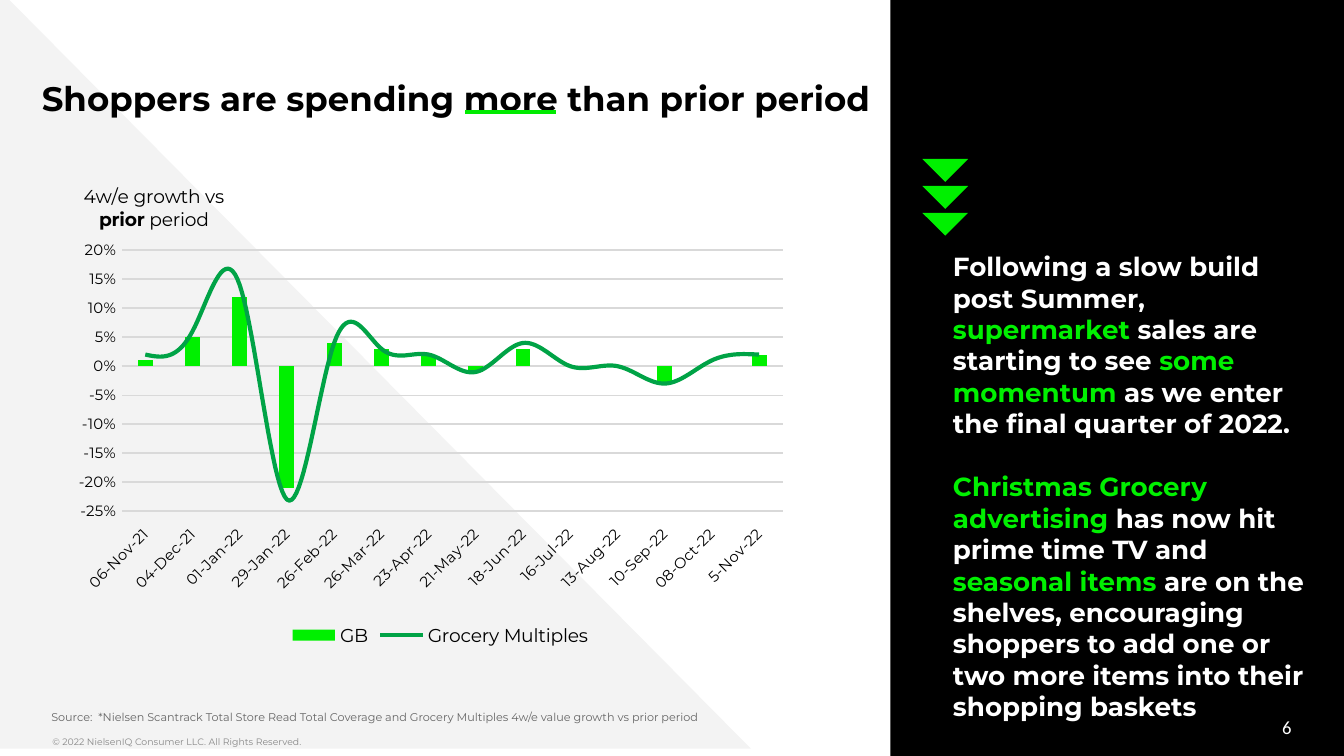
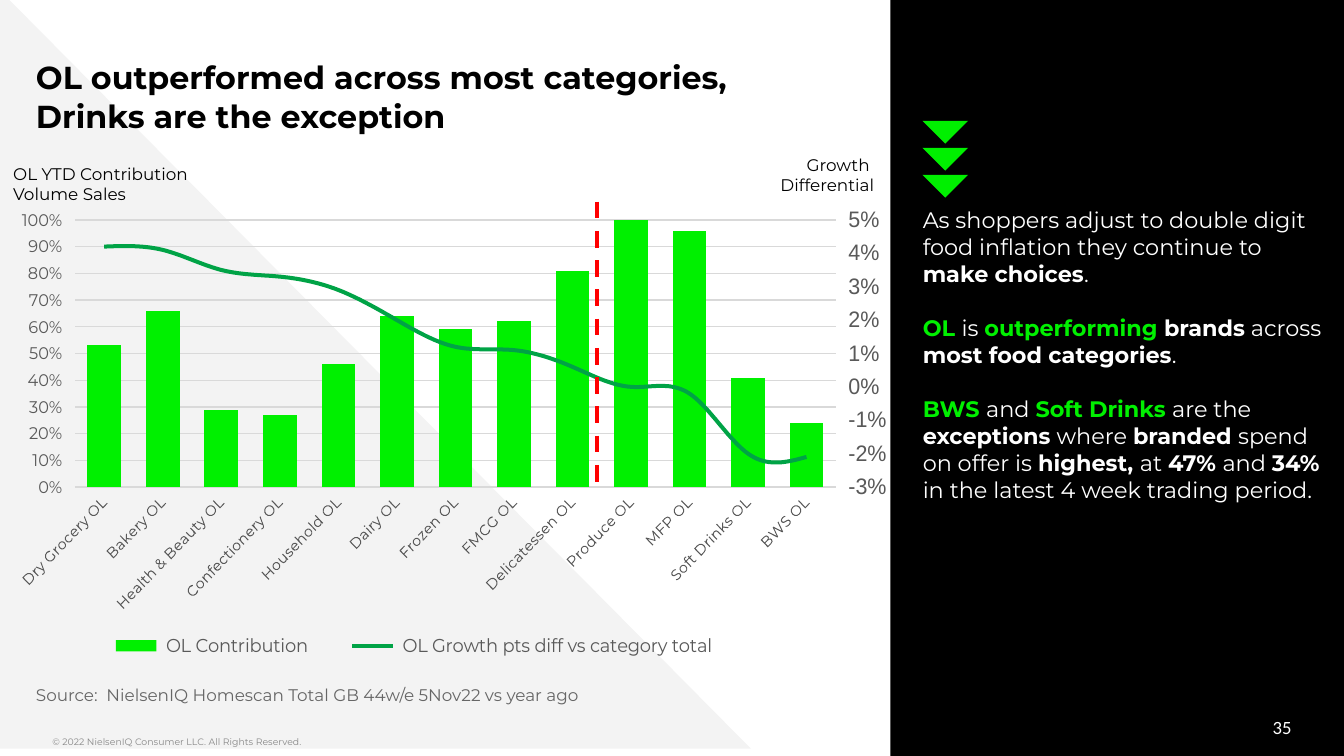
from copy import deepcopy
from dataclasses import dataclass

from lxml.etree import SubElement
from pptx import Presentation
from pptx.chart.axis import ValueAxis
from pptx.chart.data import CategoryChartData
from pptx.dml.color import RGBColor
from pptx.enum.chart import (XL_CHART_TYPE, XL_LEGEND_POSITION, XL_MARKER_STYLE,
                             XL_TICK_LABEL_POSITION, XL_TICK_MARK)
from pptx.enum.dml import MSO_LINE
from pptx.enum.shapes import MSO_CONNECTOR, MSO_SHAPE
from pptx.enum.text import MSO_ANCHOR, MSO_AUTO_SIZE, PP_ALIGN
from pptx.oxml import parse_xml
from pptx.oxml.ns import nsdecls, qn
from pptx.util import Cm, Pt


@dataclass(frozen=True)
class Theme:
    font: str = "Montserrat"
    number_font: str = "Calibri"
    axis_font: str = "Arial"
    black: str = "000000"
    white: str = "FFFFFF"
    backdrop: str = "F3F3F3"
    accent: str = "00F000"
    underline: str = "00EB00"
    trend: str = "00A346"
    divider: str = "FF0000"
    grid: str = "D9D9D9"
    label: str = "595959"
    source: str = "666666"
    copyright: str = "888888"
    copyright_size: float = 5
    tick_size: float = 8
    label_size: float = 9
    legend_size: float = 10
    right_axis_size: float = 12
    line_height: float = 1.22


def rgb(value):
    return RGBColor.from_string(value)


def box(left, top, width, height):
    return Cm(left), Cm(top), Cm(width), Cm(height)


def set_layout(parent, index, inner=False, **fractions):
    """Fix the place of a chart part, as fractions of the chart."""
    for old in parent.findall(qn("c:layout")):
        parent.remove(old)
    target = '<c:layoutTarget val="inner"/>' if inner else ""
    modes = "".join(f'<c:{key}Mode val="edge"/>' for key in "xy")
    sizes = "".join(f'<c:{key} val="{value}"/>' for key, value in fractions.items())
    parent.insert(index, parse_xml(
        f'<c:layout {nsdecls("c")}><c:manualLayout>{target}{modes}{sizes}'
        f'</c:manualLayout></c:layout>'))


def move_last_series_to_line(chart):
    """Turn the second series into a line; return the left and right value axes."""
    plot_area = chart.element.find(".//" + qn("c:plotArea"))
    series = plot_area.findall(".//" + qn("c:ser"))[-1]
    invert = series.find(qn("c:invertIfNegative"))
    if invert is not None:
        series.remove(invert)
    line_chart = parse_xml(
        f'<c:lineChart {nsdecls("c")}><c:grouping val="standard"/><c:varyColors val="0"/>'
        '<c:marker val="1"/><c:axId val="101"/><c:axId val="102"/></c:lineChart>')
    line_chart.insert(2, series)
    plot_area.find(qn("c:barChart")).addnext(line_chart)

    category = plot_area.find(qn("c:catAx"))
    left = plot_area.find(qn("c:valAx"))
    right, hidden = deepcopy(left), deepcopy(category)
    for axis, own, other in ((right, "102", "101"), (hidden, "101", "102")):
        axis.find(qn("c:axId")).set("val", own)
        axis.find(qn("c:crossAx")).set("val", other)
    right.remove(right.find(qn("c:majorGridlines")))
    right.find(qn("c:axPos")).set("val", "r")
    right.find(qn("c:crosses")).set("val", "max")
    hidden.find(qn("c:delete")).set("val", "1")
    left.addnext(right)
    right.addnext(hidden)
    return ValueAxis(left), ValueAxis(right)


class Deck:
    def __init__(self, theme):
        self.theme = theme
        self.presentation = Presentation()
        self.presentation.slide_width = Cm(25.4)
        self.presentation.slide_height = Cm(14.29)
        self.slide = None

    def start_slide(self, title, place, size, number):
        theme = self.theme
        self.slide = self.presentation.slides.add_slide(self.presentation.slide_layouts[5])
        self.shape(self.slide.shapes, MSO_SHAPE.RECTANGLE, (16.83, -0.05, 8.71, 14.38), theme.black)
        self.shape(self.slide.shapes, MSO_SHAPE.RIGHT_TRIANGLE, (0, -0.18, 14.19, 14.33),
                   theme.backdrop)
        self.text((0.99, 13.79, 14.07, 0.51), "© 2022 NielsenIQ Consumer LLC. All Rights Reserved.",
                  theme.copyright_size, theme.copyright)
        self.text((18.69, 13.36, 5.72, 0.76), str(number), 10, theme.white, font=theme.number_font,
                  align=PP_ALIGN.RIGHT, anchor=MSO_ANCHOR.MIDDLE)
        heading = self.slide.shapes.title
        heading.element.getparent().append(heading.element)
        heading.left, heading.top, heading.width, heading.height = box(*place)
        frame = heading.text_frame
        frame.text = title
        self.frame(frame, 0, 0.25, MSO_ANCHOR.TOP)
        frame.paragraphs[0].alignment = PP_ALIGN.LEFT
        self.font(frame.paragraphs[0].runs[0].font, size, theme.black, bold=True)

    def font(self, font, size, color, bold=False, name=None):
        font.name = name or self.theme.font
        font.size = Pt(size)
        font.bold = bold
        font.color.rgb = rgb(color)

    def frame(self, frame, side, edge, anchor, wrap=True):
        frame.margin_left = frame.margin_right = Cm(side)
        frame.margin_top = frame.margin_bottom = Cm(edge)
        frame.vertical_anchor = anchor
        frame.word_wrap = wrap
        frame.auto_size = MSO_AUTO_SIZE.NONE

    def shape(self, shapes, kind, place, color):
        shape = shapes.add_shape(kind, *box(*place))
        shape.shadow.inherit = False
        shape.fill.solid()
        shape.fill.fore_color.rgb = rgb(color)
        shape.line.fill.background()
        return shape

    def text(self, place, text, size, color, font=None, align=PP_ALIGN.LEFT,
             anchor=MSO_ANCHOR.TOP, side=0, edge=0.13, wrap=True):
        frame = self.slide.shapes.add_textbox(*box(*place)).text_frame
        frame.text = text
        self.frame(frame, side, edge, anchor, wrap)
        for paragraph in frame.paragraphs:
            paragraph.alignment = align
            self.font(paragraph.runs[0].font, size, color, name=font)

    def source(self, place, text, size):
        self.text(place, text, size, self.theme.source, anchor=MSO_ANCHOR.BOTTOM, edge=0.25)

    def axis_label(self, place, text, align):
        self.text(place, text, self.theme.label_size, self.theme.black, align=align,
                  side=0.25, wrap=False)

    def commentary(self, place, paragraphs, size):
        """Each run is (text, mark): "" plain, "b" bold, "g" bold green."""
        frame = self.slide.shapes.add_textbox(*box(*place)).text_frame
        self.frame(frame, 0, 0.13, MSO_ANCHOR.TOP)
        for index, runs in enumerate(paragraphs):
            paragraph = frame.add_paragraph() if index else frame.paragraphs[0]
            if index:
                paragraph.space_before = Pt(round(size * self.theme.line_height, 1))
            for text, mark in runs:
                run = paragraph.add_run()
                run.text = text
                color = self.theme.accent if mark == "g" else self.theme.white
                self.font(run.font, size, color, bold=bool(mark))

    def down_arrows(self, top):
        group = self.slide.shapes.add_group_shape()
        for index in range(3):
            arrow = self.shape(group.shapes, MSO_SHAPE.RIGHT_TRIANGLE,
                               (17.56, top + index * 0.51, 0.61, 0.61), self.theme.accent)
            arrow.rotation = 315

    def line(self, start, end, color, width, dash=None):
        points = [Cm(value) for value in (*start, *end)]
        connector = self.slide.shapes.add_connector(MSO_CONNECTOR.STRAIGHT, *points)
        connector.line.color.rgb = rgb(color)
        connector.line.width = Pt(width)
        if dash:
            connector.line.dash_style = dash
        SubElement(connector.element.spPr, qn("a:effectLst"))

    def value_axis(self, axis, scale, size, color, tick, font=None):
        axis.minimum_scale, axis.maximum_scale, axis.major_unit = scale
        axis.major_tick_mark = tick
        axis.minor_tick_mark = XL_TICK_MARK.NONE
        axis.tick_labels.number_format = "0%"
        axis.tick_labels.number_format_is_linked = False
        axis.format.line.fill.background()
        self.font(axis.tick_labels.font, size, color, name=font)

    def combined_chart(self, place, categories, series, plot, gap, color, left_scale, right_scale,
                       left_size, tick):
        """Add a chart of columns and a line; return it with its left and right axes."""
        theme = self.theme
        data = CategoryChartData(number_format="0%")
        data.categories = categories
        for name, values in series:
            data.add_series(name, values)
        chart = self.slide.shapes.add_chart(XL_CHART_TYPE.COLUMN_CLUSTERED, *box(*place), data).chart
        chart.has_title = False
        self.font(chart.font, theme.legend_size, theme.black)
        left_axis, right_axis = move_last_series_to_line(chart)

        columns, lines = chart.plots
        columns.gap_width = gap
        columns.vary_by_categories = False
        columns.series[0].format.fill.solid()
        columns.series[0].format.fill.fore_color.rgb = rgb(theme.accent)
        trend = lines.series[0]
        trend.smooth = True
        trend.marker.style = XL_MARKER_STYLE.NONE
        trend.format.line.color.rgb = rgb(theme.trend)
        trend.format.line.width = Pt(2.25)

        category_axis = chart.category_axis
        category_axis.major_tick_mark = XL_TICK_MARK.NONE
        self.font(category_axis.tick_labels.font, theme.tick_size, color)
        chart.element.xpath(".//c:catAx/c:txPr/a:bodyPr")[0].set("rot", "-2700000")
        self.value_axis(left_axis, left_scale, left_size, color, tick)
        self.value_axis(right_axis, right_scale, theme.right_axis_size, color, tick,
                        theme.axis_font)
        for outline in (category_axis.format.line, left_axis.major_gridlines.format.line):
            outline.color.rgb = rgb(theme.grid)
            outline.width = Pt(0.75)

        chart.has_legend = True
        chart.legend.position = XL_LEGEND_POSITION.BOTTOM
        chart.legend.include_in_layout = False
        self.font(chart.legend.font, theme.legend_size, color)
        set_layout(chart.element.find(".//" + qn("c:plotArea")), 0, inner=True,
                   **dict(zip("xywh", plot)))
        return chart, left_axis, right_axis

    def growth_axis_title(self, chart, axis):
        frame = axis.axis_title.text_frame
        frame.text = "4w/e growth vs"
        second = frame.add_paragraph()
        for text in ("prior", " period"):
            second.add_run().text = text
        for paragraph in frame.paragraphs:
            for run in paragraph.runs:
                self.font(run.font, self.theme.legend_size, self.theme.black,
                          bold=run.text == "prior")
        title = chart.element.xpath(".//c:valAx/c:title")[0]
        body = title.find(".//" + qn("a:bodyPr"))
        body.set("rot", "0")
        body.set("vert", "horz")
        set_layout(title, 1, x=0.02, y=0)


def build_spending_slide(deck):
    theme = deck.theme
    deck.start_slide("Shoppers are spending more than prior period", (0.79, 1.22, 16.18, 2.01),
                     18.2, 6)
    deck.line((8.79, 2.11), (10.5, 2.11), theme.underline, 2)
    deck.commentary((18.01, 4.61, 6.99, 8.59), [
        [("Following a slow build post Summer, ", "b"), ("supermarket ", "g"),
         ("sales are starting to see ", "b"), ("some momentum", "g"),
         (" as we enter the final quarter of 2022.", "b")],
        [("Christmas Grocery advertising ", "g"), ("has now hit prime time TV and ", "b"),
         ("seasonal items ", "g"),
         ("are on the shelves, encouraging shoppers to add one or two more items into their "
          "shopping baskets", "b")]], 14)
    deck.down_arrows(2.7)
    deck.source((0.97, 13.43, 15.42, 0.51),
                "Source:  *Nielsen Scantrack Total Store Read Total Coverage and Grocery Multiples "
                "4w/e value growth vs prior period", 6)
    scale = (-0.25, 0.2, 0.05)
    chart, left_axis, right_axis = deck.combined_chart(
        (1.22, 3.38, 14.2, 8.94),
        ["06-Nov-21", "04-Dec-21", "01-Jan-22", "29-Jan-22", "26-Feb-22", "26-Mar-22", "23-Apr-22",
         "21-May-22", "18-Jun-22", "16-Jul-22", "13-Aug-22", "10-Sep-22", "08-Oct-22", "5-Nov-22"],
        [("GB", [0.01, 0.05, 0.12, -0.21, 0.04, 0.03, 0.02, -0.01, 0.03, 0, 0, -0.03, 0, 0.02]),
         ("Grocery Multiples", [0.02, 0.06, 0.14, -0.23, 0.04, 0.03, 0.02, -0.01, 0.04, 0, 0,
                                -0.03, 0.01, 0.02])],
        (0.076, 0.151, 0.88, 0.552), 219, theme.black, scale, scale, theme.tick_size,
        XL_TICK_MARK.NONE)
    chart.category_axis.tick_label_position = XL_TICK_LABEL_POSITION.LOW
    right_axis.visible = False
    deck.growth_axis_title(chart, left_axis)


def build_categories_slide(deck):
    theme = deck.theme
    deck.start_slide("OL outperformed across most categories, Drinks are the exception",
                     (0.68, 0.85, 15.06, 1.24), 17, 35)
    deck.commentary((17.44, 3.77, 7.54, 8.92), [
        [("As shoppers adjust to double digit food inflation they continue to ", ""),
         ("make choices", "b"), (".", "")],
        [("OL ", "g"), ("is ", ""), ("outperforming ", "g"), ("brands", "b"), (" across", ""),
         (" most food categories", "b"), (".", "")],
        [("BWS ", "g"), ("and ", ""), ("Soft Drinks ", "g"), ("are the ", ""), ("exceptions", "b"),
         (" where ", ""), ("branded ", "b"), ("spend on offer is ", ""), ("highest, ", "b"),
         ("at ", ""), ("47% ", "b"), ("and ", ""), ("34% ", "b"),
         ("in the latest 4 week trading period.", "")]], 12)
    deck.down_arrows(1.98)
    deck.source((0.68, 13.06, 22.66, 0.51),
                "Source:  NielsenIQ Homescan Total GB 44w/e 5Nov22 vs year ago", 9)
    chart, _, _ = deck.combined_chart(
        (0.28, 3.86, 16.48, 8.74),
        ["Dry Grocery OL", "Bakery OL", "Health & Beauty OL", "Confectionery OL", "Household OL",
         "Dairy OL", "Frozen OL", "FMCG OL", "Delicatessen OL", "Produce OL", "MFP OL",
         "Soft Drinks OL", "BWS OL"],
        [(" OL Contribution ", [0.53, 0.66, 0.29, 0.27, 0.46, 0.64, 0.59, 0.62, 0.81, 1, 0.96,
                                0.41, 0.24]),
         (" OL Growth pts diff vs category total ",
          [0.042, 0.041, 0.035, 0.033, 0.029, 0.02, 0.012, 0.011, 0.006, 0, -0.002, -0.02,
           -0.021])],
        (0.072, 0.034, 0.91, 0.578), 74, theme.label, (0, 1, 0.1), (-0.03, 0.05, 0.01),
        theme.label_size, XL_TICK_MARK.OUTSIDE)
    set_layout(chart.element.find(".//" + qn("c:legend")), 1, x=0.08, y=0.91, w=0.8, h=0.09)
    deck.axis_label((0, 2.97, 3.84, 1.02), "OL YTD Contribution\nVolume Sales", PP_ALIGN.LEFT)
    deck.axis_label((14.48, 2.79, 2.29, 1.02), "Growth \nDifferential", PP_ALIGN.RIGHT)
    deck.line((11.28, 3.81), (11.28, 9.19), theme.divider, 2.25, MSO_LINE.DASH)


def main():
    deck = Deck(Theme())
    build_spending_slide(deck)
    build_categories_slide(deck)
    deck.presentation.save("out.pptx")


if __name__ == "__main__":
    main()
